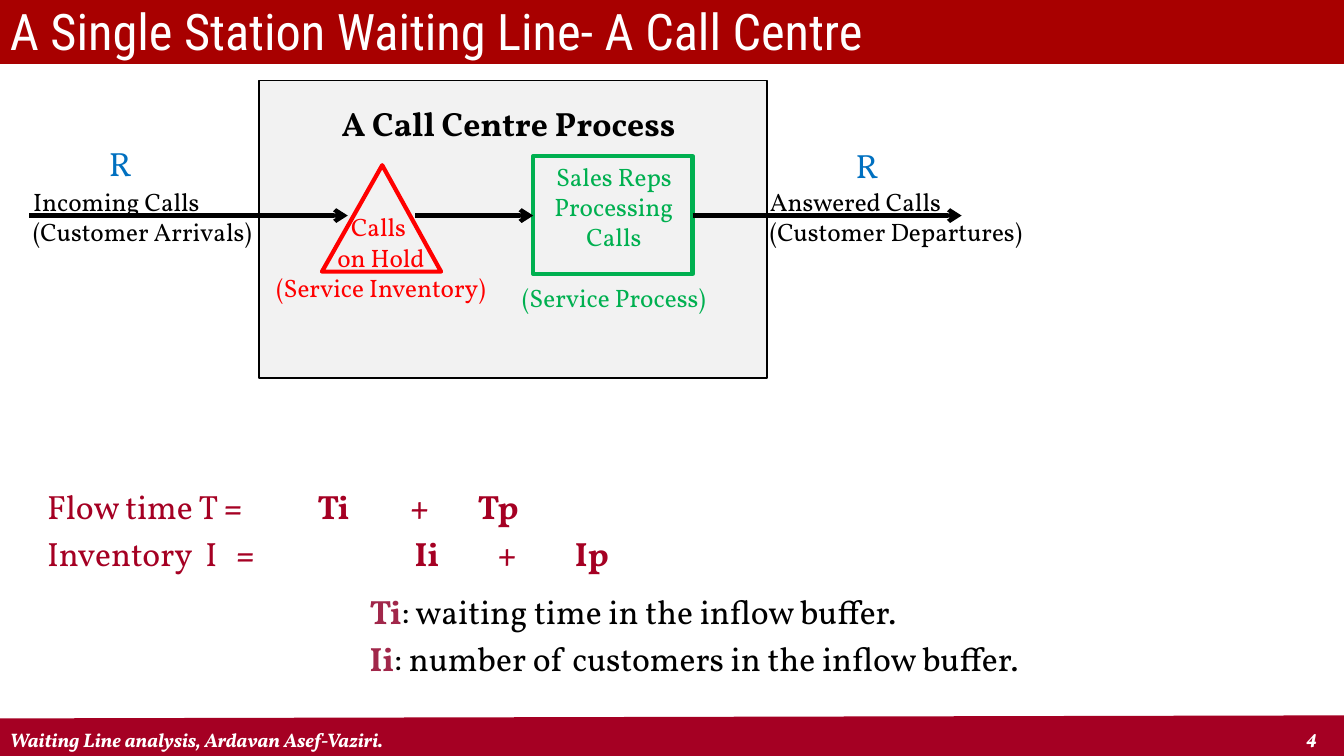
from lxml import etree
from pptx import Presentation
from pptx import util as u
from pptx.dml.color import RGBColor
from pptx.enum import shapes, text
from pptx.oxml import ns

Pt = u.Pt
BLACK = RGBColor(0x00, 0x00, 0x00)
WHITE = RGBColor(0xFF, 0xFF, 0xFF)
GREY = RGBColor(0xF2, 0xF2, 0xF2)
RED = RGBColor(0xFF, 0x00, 0x00)
GREEN = RGBColor(0x00, 0xB0, 0x50)
BLUE = RGBColor(0x00, 0x70, 0xC0)
BANNER = RGBColor(0xA8, 0x00, 0x00)
CRIMSON = RGBColor(0xA5, 0x00, 0x23)
ROSE = RGBColor(0xA1, 0x27, 0x4A)

LEFT, CENTER = text.PP_ALIGN.LEFT, text.PP_ALIGN.CENTER
TOP, MIDDLE, BOTTOM = (text.MSO_ANCHOR.TOP, text.MSO_ANCHOR.MIDDLE,
                       text.MSO_ANCHOR.BOTTOM)


class Sheet:
    """Draws styled elements on one slide; all lengths are in points."""

    def __init__(self, slide, font="Vollkorn"):
        self.shapes = slide.shapes
        self.font = font

    def style(self, sp, line, width, fill=None):
        sp.shadow.inherit = False
        if fill is None:
            sp.fill.background()
        else:
            sp.fill.solid()
            sp.fill.fore_color.rgb = fill
        sp.line.color.rgb = line
        sp.line.width = Pt(width)

    def box(self, x, y, w, h, line, width, fill=None):
        sp = self.shapes.add_shape(shapes.MSO_SHAPE.RECTANGLE,
                                   Pt(x), Pt(y), Pt(w), Pt(h))
        self.style(sp, line, width, fill)

    def outline(self, points, line, width):
        builder = self.shapes.build_freeform(*points[0], scale=Pt(1))
        builder.add_line_segments(points[1:], close=True)
        self.style(builder.convert_to_shape(), line, width)

    def line(self, x1, y1, x2, y2, color, width, arrow=False):
        cn = self.shapes.add_connector(shapes.MSO_CONNECTOR.STRAIGHT,
                                       Pt(x1), Pt(y1), Pt(x2), Pt(y2))
        cn.line.color.rgb = color
        cn.line.width = Pt(width)
        if arrow:
            ln = cn.line._get_or_add_ln()
            etree.SubElement(ln, ns.qn("a:tailEnd"), type="arrow")
        etree.SubElement(cn._element.spPr, ns.qn("a:effectLst"))

    def text(self, x, y, w, h, paragraphs, size, color, font=None, bold=False,
             italic=False, align=LEFT, anchor=TOP, wrap=True, gaps=(), tabs=()):
        """Each paragraph is a list of (text, overrides) runs."""
        tf = self.shapes.add_textbox(Pt(x), Pt(y), Pt(w), Pt(h)).text_frame
        tf.word_wrap = wrap
        tf.vertical_anchor = anchor
        for i, runs in enumerate(paragraphs):
            p = tf.paragraphs[0] if i == 0 else tf.add_paragraph()
            p.alignment = align
            if i and gaps:
                p.space_before = Pt(gaps[i - 1])
            if tabs:
                tab_list = etree.SubElement(p._p.get_or_add_pPr(),
                                            ns.qn("a:tabLst"))
                for stop in tabs[i]:
                    etree.SubElement(tab_list, ns.qn("a:tab"),
                                     pos=str(Pt(stop)), algn="l")
            for words, changes in runs:
                r = p.add_run()
                r.text = words
                r.font.name = font or self.font
                r.font.size = Pt(size)
                r.font.italic = italic
                r.font.bold = changes.get("bold", bold)
                r.font.color.rgb = changes.get("color", color)


def plain(*lines):
    return [[(words, {})] for words in lines]


def main():
    prs = Presentation()
    prs.slide_width, prs.slide_height = Pt(960), Pt(540)
    s = Sheet(prs.slides.add_slide(prs.slide_layouts[6]))

    # Footer and title banner
    s.line(0, 527.8, 960, 525.6, CRIMSON, 29.25)
    footer = dict(size=14, color=WHITE, bold=True, italic=True, anchor=BOTTOM)
    s.text(0, 515.5, 780, 24.5,
           plain("Waiting Line analysis, Ardavan Asef-Vaziri."), **footer)
    s.text(926, 513.4, 34, 24.5, plain("4"), **footer)
    s.box(0, 0, 960, 45.5, BANNER, 0.75, BANNER)
    s.text(0, 0, 960, 43.2,
           plain("A Single Station Waiting Line- A Call Centre"),
           36, WHITE, font="Roboto Condensed", anchor=MIDDLE)

    # Process frame and its labels
    s.box(185, 57.6, 363, 212.4, BLACK, 1, GREY)
    s.text(363.6, 111.6, 149.8, 116.6,
           plain("Sales Reps", "Processing", "Calls", "(Service Process)"),
           18, GREEN, align=CENTER, wrap=False, gaps=(0, 0, 22))
    s.text(187.9, 147.6, 168.5, 72.7,
           plain("Calls ", "on Hold", "(Service Inventory)"),
           18, RED, align=CENTER, wrap=False)
    for x, w, lines in ((16.6, 177, ("Incoming Calls", "(Customer Arrivals)")),
                        (542.9, 201, ("Answered Calls",
                                      "(Customer Departures)"))):
        s.text(x, 129.6, w, 51, plain(*lines), 18, BLACK, wrap=False)

    # Buffer triangle and server box
    s.box(380.9, 111.6, 113.8, 84.2, GREEN, 3)
    s.outline([(230.4, 193.7), (272.7, 118.1), (314.6, 193.7)], RED, 3)
    s.text(236.9, 69.8, 253.4, 36, plain("A Call Centre Process"),
           24, BLACK, bold=True, wrap=False)

    # Flow arrows
    for start, end in ((494.7, 686.9), (20.9, 248.4), (296.6, 380.9)):
        s.line(start, 154, end, 154, BLACK, 3, arrow=True)

    # Flow time and inventory equations
    strong = {"bold": True}
    s.text(26.6, 343.4, 468, 78.5,
           [[("Flow time T ", {}), ("=\tTi\t+\tTp", strong)],
            [("Inventory\tI\t", {}), ("=\tIi\t+\tIp", strong)]],
           24, CRIMSON, gaps=(4.8,),
           tabs=((193, 259.5, 307.5), (113, 135, 262.5, 322, 377)))

    # Definitions
    term = {"bold": True, "color": ROSE}
    s.text(257, 418.3, 501, 68.4,
           [[("Ti", term), (": waiting time in the inflow buffer.", {})],
            [("Ii", term), (": number of customers in the inflow buffer.", {})]],
           24, BLACK, gaps=(4.8,))

    # Throughput rates
    for x, y in ((70.6, 98.6), (604.1, 100.1)):
        s.text(x, y, 58.3, 36.7, plain("R"), 24, BLUE)

    prs.save("out.pptx")


if __name__ == "__main__":
    main()
